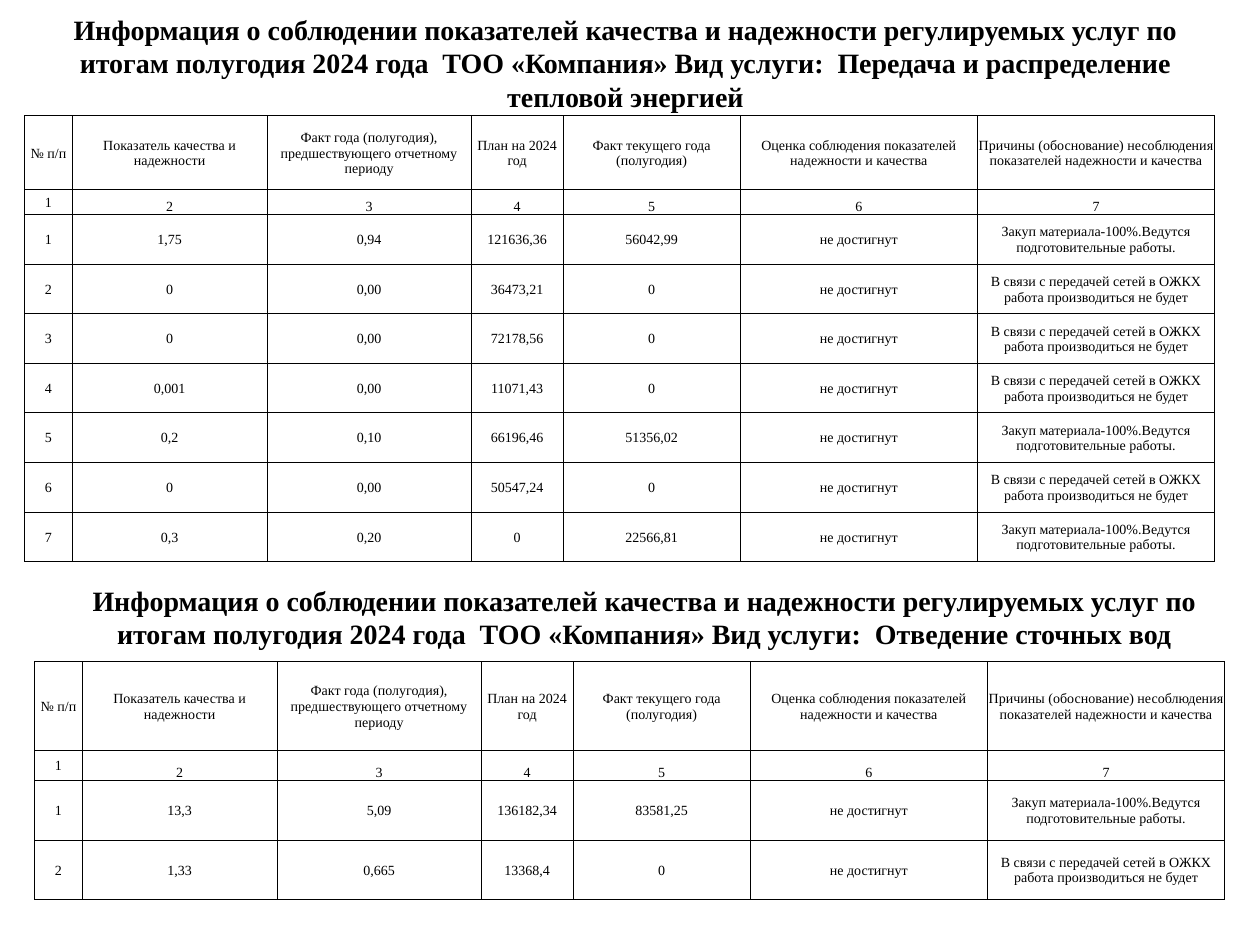
from dataclasses import dataclass

from lxml.etree import SubElement
from pptx import Presentation
from pptx.dml.color import RGBColor
from pptx.enum.text import MSO_ANCHOR as Anchor, MSO_AUTO_SIZE as AutoSize, PP_ALIGN as Align
from pptx.oxml.ns import qn
from pptx.util import Pt

COLORS = {"ink": "000000", "paper": "FFFFFF"}
FONT = "Times New Roman"
HEADING_FORMAT = {"name": FONT, "size": Pt(16), "bold": True}
CELL_FORMAT = {"name": FONT, "size": Pt(8), "bold": False}
CELL_MARGINS = {"margin_left": Pt(0.6), "margin_right": Pt(0.6),
                "margin_top": Pt(0.6), "margin_bottom": Pt(0)}

COLUMN_WIDTHS = (27.2, 111.4, 116.6, 52.6, 101.2, 135.6, 135.6)
COLUMN_NAMES = (
    "№ п/п",
    "Показатель качества и надежности",
    "Факт года (полугодия), предшествующего отчетному периоду",
    "План на 2024 год",
    "Факт текущего года (полугодия)",
    "Оценка соблюдения показателей надежности и качества",
    "Причины (обоснование) несоблюдения показателей надежности и качества",
)
COLUMN_NUMBERS = tuple(str(n) for n in range(1, len(COLUMN_NAMES) + 1))
# Row heights in units: names, numbers, then every indicator
NAMES_UNITS, NUMBERS_UNITS, INDICATOR_UNITS = 3, 1, 2

HEADING = ("Информация о соблюдении показателей качества и надежности регулируемых услуг "
           "по итогам полугодия 2024 года  ТОО «Компания» Вид услуги:  ")
NOT_REACHED = "не достигнут"
PURCHASED = "Закуп материала-100%.Ведутся подготовительные работы."
TRANSFERRED = "В связи с передачей сетей в ОЖКХ работа производиться не будет"


@dataclass(frozen=True)
class Box:
    left: float
    top: float
    width: float
    height: float

    def lengths(self) -> tuple:
        return tuple(Pt(v) for v in (self.left, self.top, self.width, self.height))


@dataclass(frozen=True)
class Indicator:
    quality: str
    previous: str
    plan: str
    current: str
    reason: str

    def cells(self, number: int) -> tuple:
        return (str(number), self.quality, self.previous, self.plan,
                self.current, NOT_REACHED, self.reason)


@dataclass(frozen=True)
class Service:
    name: str
    heading_box: Box
    table_box: Box
    indicators: tuple


SERVICES = (
    Service("Передача и распределение тепловой энергией",
            Box(14.4, 0.8, 686, 70), Box(14.1, 66, sum(COLUMN_WIDTHS), 255), (
                Indicator("1,75", "0,94", "121636,36", "56042,99", PURCHASED),
                Indicator("0", "0,00", "36473,21", "0", TRANSFERRED),
                Indicator("0", "0,00", "72178,56", "0", TRANSFERRED),
                Indicator("0,001", "0,00", "11071,43", "0", TRANSFERRED),
                Indicator("0,2", "0,10", "66196,46", "51356,02", PURCHASED),
                Indicator("0", "0,00", "50547,24", "0", TRANSFERRED),
                Indicator("0,3", "0,20", "0", "22566,81", PURCHASED),
            )),
    Service("Отведение сточных вод",
            Box(25.2, 327, 686, 51), Box(19.8, 378, sum(COLUMN_WIDTHS), 136), (
                Indicator("13,3", "5,09", "136182,34", "83581,25", PURCHASED),
                Indicator("1,33", "0,665", "13368,4", "0", TRANSFERRED),
            )),
)


def apply(target, values: dict) -> None:
    for attribute, value in values.items():
        setattr(target, attribute, value)


def write(frame, text: str, font_format: dict) -> None:
    paragraph = frame.paragraphs[0]
    paragraph.alignment = Align.CENTER
    run = paragraph.add_run()
    run.text = text
    apply(run.font, font_format)
    run.font.color.rgb = RGBColor.from_string(COLORS["ink"])


def write_heading(shape, service: Service) -> None:
    box = service.heading_box.lengths()
    apply(shape, dict(zip(("left", "top", "width", "height"), box)))
    apply(shape.text_frame, {"word_wrap": True, "auto_size": AutoSize.NONE,
                             "vertical_anchor": Anchor.MIDDLE})
    write(shape.text_frame, HEADING + service.name, HEADING_FORMAT)


def add_borders(cell) -> None:
    """Line all four sides; the lines must precede the fill in the cell's XML."""
    properties = cell._tc.get_or_add_tcPr()
    for position, side in enumerate(("a:lnL", "a:lnR", "a:lnT", "a:lnB")):
        line = SubElement(properties, qn(side), w=str(Pt(0.5)))
        fill = SubElement(line, qn("a:solidFill"))
        SubElement(fill, qn("a:srgbClr"), val=COLORS["ink"])
        properties.insert(position, line)


def add_table(slide, service: Service) -> None:
    rows = [COLUMN_NAMES, COLUMN_NUMBERS]
    rows += [indicator.cells(n) for n, indicator in enumerate(service.indicators, 1)]
    units = [NAMES_UNITS, NUMBERS_UNITS] + [INDICATOR_UNITS] * len(service.indicators)
    unit_height = service.table_box.height / sum(units)

    table = slide.shapes.add_table(len(rows), len(COLUMN_NAMES),
                                   *service.table_box.lengths()).table
    apply(table, {"first_row": False, "horz_banding": False})
    for column, width in zip(table.columns, COLUMN_WIDTHS):
        column.width = Pt(width)
    for r, (texts, count) in enumerate(zip(rows, units)):
        table.rows[r].height = Pt(count * unit_height)
        for c, text in enumerate(texts):
            cell = table.cell(r, c)
            apply(cell, CELL_MARGINS)
            cell.vertical_anchor = Anchor.BOTTOM if r == 1 and c > 0 else Anchor.MIDDLE
            if r > 1 and c == 0:
                cell.fill.solid()
                cell.fill.fore_color.rgb = RGBColor.from_string(COLORS["paper"])
            else:
                cell.fill.background()
            add_borders(cell)
            write(cell.text_frame, text, CELL_FORMAT)


def main() -> None:
    deck = Presentation()
    apply(deck, {"slide_width": Pt(720), "slide_height": Pt(540)})
    slide = deck.slides.add_slide(deck.slide_layouts[5])
    heat, sewage = SERVICES
    write_heading(slide.shapes.title, heat)
    add_table(slide, heat)
    write_heading(slide.shapes.add_textbox(*sewage.heading_box.lengths()), sewage)
    add_table(slide, sewage)
    deck.save("out.pptx")


if __name__ == "__main__":
    main()
